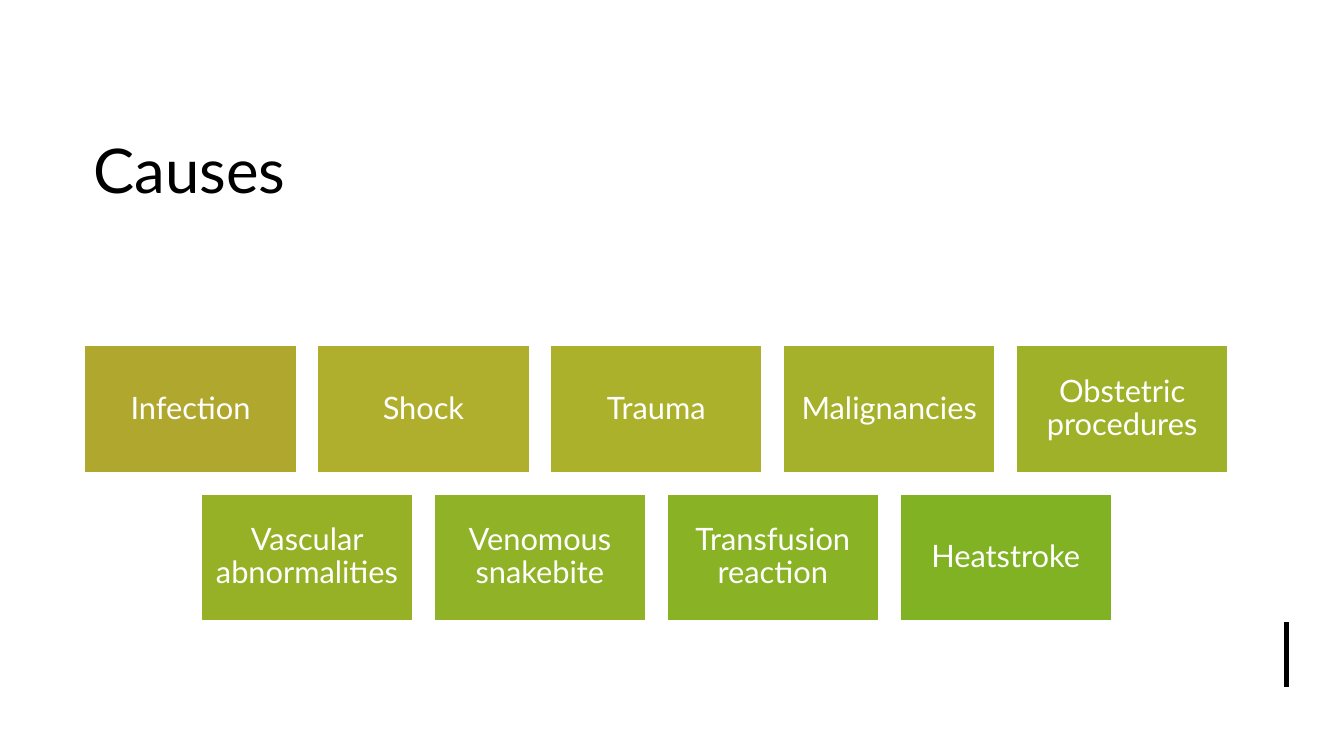
import pptx
import pptx.util
import pptx.dml.color
import pptx.enum.shapes
import pptx.enum.text
import pptx.oxml

Inches, Pt = pptx.util.Inches, pptx.util.Pt
RGB = pptx.dml.color.RGBColor
MIDDLE = pptx.enum.text.MSO_ANCHOR.MIDDLE

FONT = "Lato"
BLACK = RGB(0x00, 0x00, 0x00)
WHITE = RGB(0xFF, 0xFF, 0xFF)

# Each row of causes, with the fill of its tile
ROWS = [
    [("Infection", RGB(0xB0, 0xA7, 0x2F)),
     ("Shock", RGB(0xB0, 0xAE, 0x2D)),
     ("Trauma", RGB(0xAC, 0xB1, 0x2C)),
     ("Malignancies", RGB(0xA5, 0xB1, 0x2A)),
     ("Obstetric procedures", RGB(0x9F, 0xB1, 0x29))],
    [("Vascular abnormalities", RGB(0x97, 0xB1, 0x27)),
     ("Venomous snakebite", RGB(0x90, 0xB2, 0x26)),
     ("Transfusion reaction", RGB(0x89, 0xB2, 0x24)),
     ("Heatstroke", RGB(0x81, 0xB2, 0x23))],
]

# Tile grid, in inches
GRID_LEFT, GRID_TOP = 0.84, 3.43
TILE_W, TILE_H, GAP = 2.1, 1.26, 0.21
COL, ROW = TILE_W + GAP, TILE_H + GAP

prs = pptx.Presentation()
prs.slide_width, prs.slide_height = Inches(13.33), Inches(7.5)
s = prs.slides.add_slide(prs.slide_layouts[6])
s.background.fill.solid()
s.background.fill.fore_color.rgb = WHITE


def set_text(tf, text, size, color):
    tf.word_wrap = True
    tf.vertical_anchor = MIDDLE
    tf.text = text
    p = tf.paragraphs[0]
    p.line_spacing = 0.9
    font = p.runs[0].font
    font.name, font.size, font.color.rgb = FONT, Pt(size), color
    return p


# Title
title = s.shapes.add_textbox(Inches(0.83), Inches(0.94), Inches(10.49), Inches(1.57))
set_text(title.text_frame, "Causes", 44, BLACK)

# Accent line at the lower right
accent = s.shapes.add_connector(
    pptx.enum.shapes.MSO_CONNECTOR.STRAIGHT,
    Inches(12.76), Inches(6.17), Inches(12.76), Inches(6.82))
accent.line.color.rgb = BLACK
accent.line.width = Pt(3)
sp_pr = accent._element.spPr
sp_pr.append(pptx.oxml.parse_xml(
    '<a:effectLst xmlns:a="http://schemas.openxmlformats.org/drawingml/2006/main"/>'))

# Cause tiles, each row centred under the longest
for i, causes in enumerate(ROWS):
    indent = (len(ROWS[0]) - len(causes)) * COL / 2
    for j, (cause, fill) in enumerate(causes):
        tile = s.shapes.add_shape(
            pptx.enum.shapes.MSO_SHAPE.RECTANGLE,
            Inches(GRID_LEFT + indent + j * COL), Inches(GRID_TOP + i * ROW),
            Inches(TILE_W), Inches(TILE_H))
        tile.shadow.inherit = False
        tile.fill.solid()
        tile.fill.fore_color.rgb = fill
        tile.line.color.rgb = WHITE
        tile.line.width = Pt(1)
        tf = tile.text_frame
        tf.margin_left = tf.margin_right = Inches(0.09)
        tf.margin_top = tf.margin_bottom = Inches(0.09)
        p = set_text(tf, cause, 22, WHITE)
        p.alignment = pptx.enum.text.PP_ALIGN.CENTER

prs.save("out.pptx")
